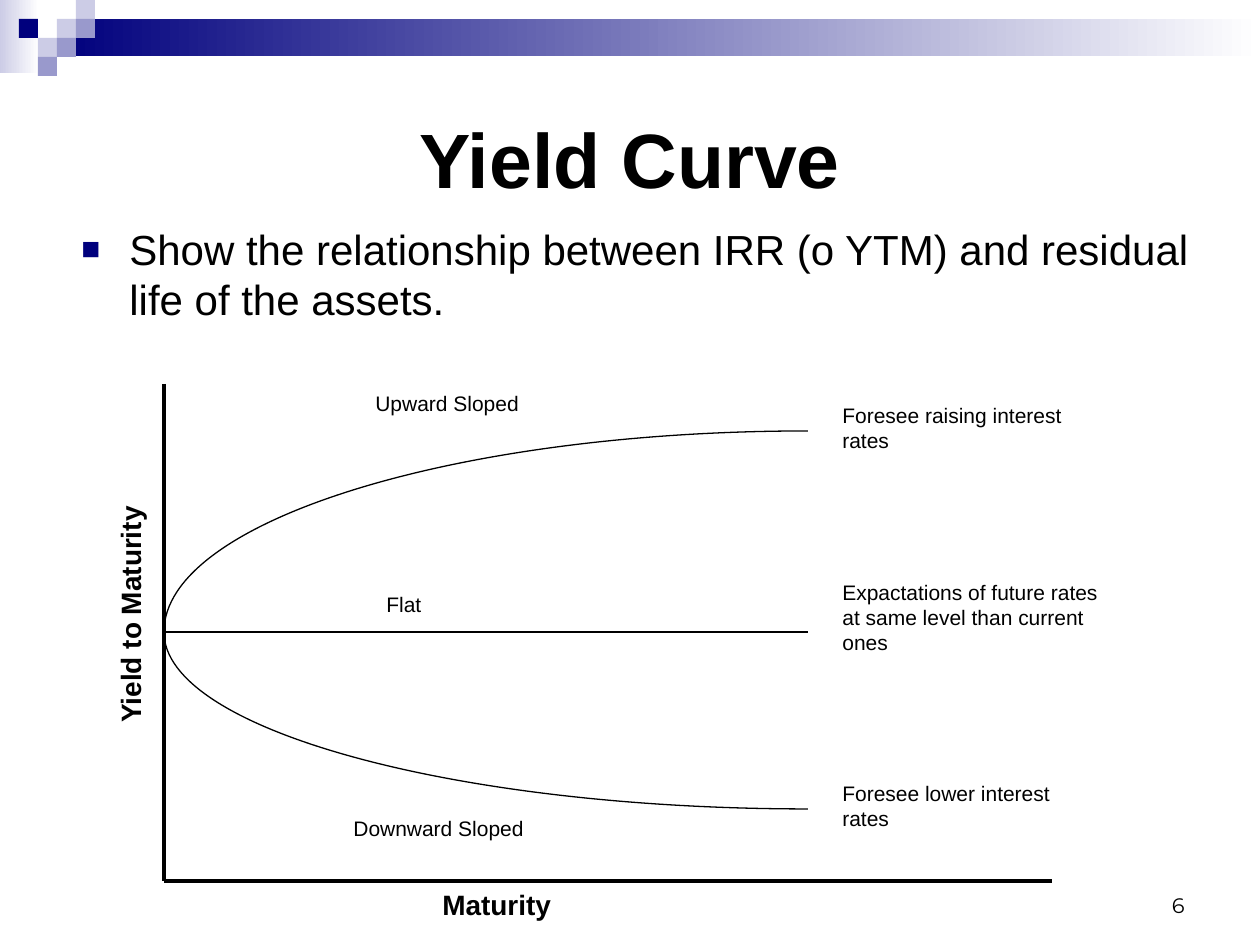
"""Build the yield curve slide."""
from lxml.etree import SubElement
from pptx import Presentation
from pptx.dml.color import RGBColor
from pptx.enum.shapes import MSO_CONNECTOR, MSO_SHAPE
from pptx.enum.text import MSO_ANCHOR, PP_ALIGN
from pptx.oxml.ns import qn
from pptx.util import Pt

HUE = {"navy": "00007D", "mid": "9999CC", "pale": "CCCCE6", "white": "FFFFFF", "black": "000000"}
BANDS = [((0, 0, 39, 73), "pale"), ((57, 19, 1203, 37), "navy")]
CELL = 19
CELLS = [(3, 1, "pale"), (4, 0, "pale"), (4, 1, "mid"), (2, 2, "pale"),
         (1, 1, "navy"), (3, 2, "mid"), (2, 3, "mid")]
TITLE = "Yield Curve"
POINT = "Show the relationship between IRR (o YTM) and residual life of the assets."
LEFT, FLAT, END = 164, 632, 808
LINES = [((LEFT, 384), (LEFT, 881), 2.25), ((LEFT, 881), (1052, 881), 2.25),
         ((LEFT, FLAT), (END, FLAT), 0.75)]
CURVES = [431, 809]
LABELS = [
    ("Upward Sloped", (363, 384, 378, 38)),
    ("Downward Sloped", (341, 809, 399, 38)),
    ("Flat", (374, 585, 378, 38)),
    ("Foresee raising interest rates", (830, 396, 267, 63)),
    ("Foresee lower interest rates", (830, 774, 267, 63)),
    ("Expactations of future rates at same level than current ones", (830, 573, 300, 89)),
]


def px(*nums):
    return [round(n * 914400 / 126) for n in nums]


def rgb(name):
    return RGBColor.from_string(HUE[name])


def style(par, size, bold=False, face="Arial"):
    par.font.name, par.font.size, par.font.bold = face, Pt(size), bold
    par.font.color.rgb = rgb("black")


def write(text, box, size, bold=False, align=PP_ALIGN.LEFT, face="Arial"):
    shape = slide.shapes.add_textbox(*px(*box))
    shape.text_frame.word_wrap = True
    par = shape.text_frame.paragraphs[0]
    par.text, par.alignment = text, align
    style(par, size, bold, face)
    return shape


def block(box, hue, fade=False):
    shape = slide.shapes.add_shape(MSO_SHAPE.RECTANGLE, *px(*box))
    shape.shadow.inherit = False
    shape.line.fill.background()
    if fade:
        shape.fill.gradient()
        shape.fill.gradient_angle = 0
        for stop, name in zip(shape.fill.gradient_stops, (hue, "white")):
            stop.color.rgb = rgb(name)
    else:
        shape.fill.solid()
        shape.fill.fore_color.rgb = rgb(hue)


def rule(start, end, width):
    line = slide.shapes.add_connector(MSO_CONNECTOR.STRAIGHT, *px(*start, *end))
    line.line.color.rgb, line.line.width = rgb("black"), Pt(width)
    SubElement(line._element.spPr, qn("a:effectLst"))


def curve(top):
    pen = slide.shapes.build_freeform(*px(END, top))
    pen.add_line_segments([px(LEFT, FLAT)], close=False)
    shape = pen.convert_to_shape()
    shape.shadow.inherit = False
    shape.fill.background()
    shape.line.color.rgb, shape.line.width = rgb("black"), Pt(0.75)
    wide, high = shape.width, shape.height
    first, last = (0, high) if top < FLAT else (high, 0)
    bend = 0.55
    spots = [(wide * (1 - bend), first), (0, last + (first - last) * bend), (0, last)]
    step = next(shape._element.iter(qn("a:lnTo")))
    path = step.getparent()
    path.remove(step)
    arc = SubElement(path, qn("a:cubicBezTo"))
    for x, y in spots:
        SubElement(arc, qn("a:pt"), x=str(round(x)), y=str(round(y)))


deck = Presentation()
deck.slide_width, deck.slide_height = px(1260, 945)
slide = deck.slides.add_slide(deck.slide_layouts[5])

for box, hue in BANDS:
    block(box, hue, fade=True)
for col, row, hue in CELLS:
    block((col * CELL, row * CELL, CELL, CELL), hue)

title = slide.shapes.title
title.left, title.top, title.width, title.height = px(63, 63, 1134, 189)
title.text = TITLE
title.text_frame.vertical_anchor = MSO_ANCHOR.MIDDLE
head = title.text_frame.paragraphs[0]
head.alignment = PP_ALIGN.CENTER
style(head, 44, bold=True)

body = write(POINT, (69, 217, 1134, 168), 24)
props = body.text_frame.paragraphs[0]._p.get_or_add_pPr()
dent = px(48)[0]
props.set("marL", str(dent))
props.set("indent", str(-dent))
SubElement(SubElement(props, qn("a:buClr")), qn("a:srgbClr"), val=HUE["navy"])
SubElement(props, qn("a:buSzPct"), val="75000")
SubElement(props, qn("a:buFont"), typeface="Arial")
SubElement(props, qn("a:buChar"), char="■")
props.append(props.find(qn("a:defRPr")))

for start, end, width in LINES:
    rule(start, end, width)
for top in CURVES:
    curve(top)
for text, box in LABELS:
    write(text, box, 12)
write("Maturity", (430, 881, 212, 47), 16, bold=True)
side = write("Yield to Maturity", (-100, 591, 461, 47), 16, bold=True, align=PP_ALIGN.CENTER)
side.rotation = 270
page = write("6", (903, 861, 294, 63), 12, align=PP_ALIGN.RIGHT, face="Montserrat")
page.text_frame.vertical_anchor = MSO_ANCHOR.BOTTOM

deck.save("out.pptx")
